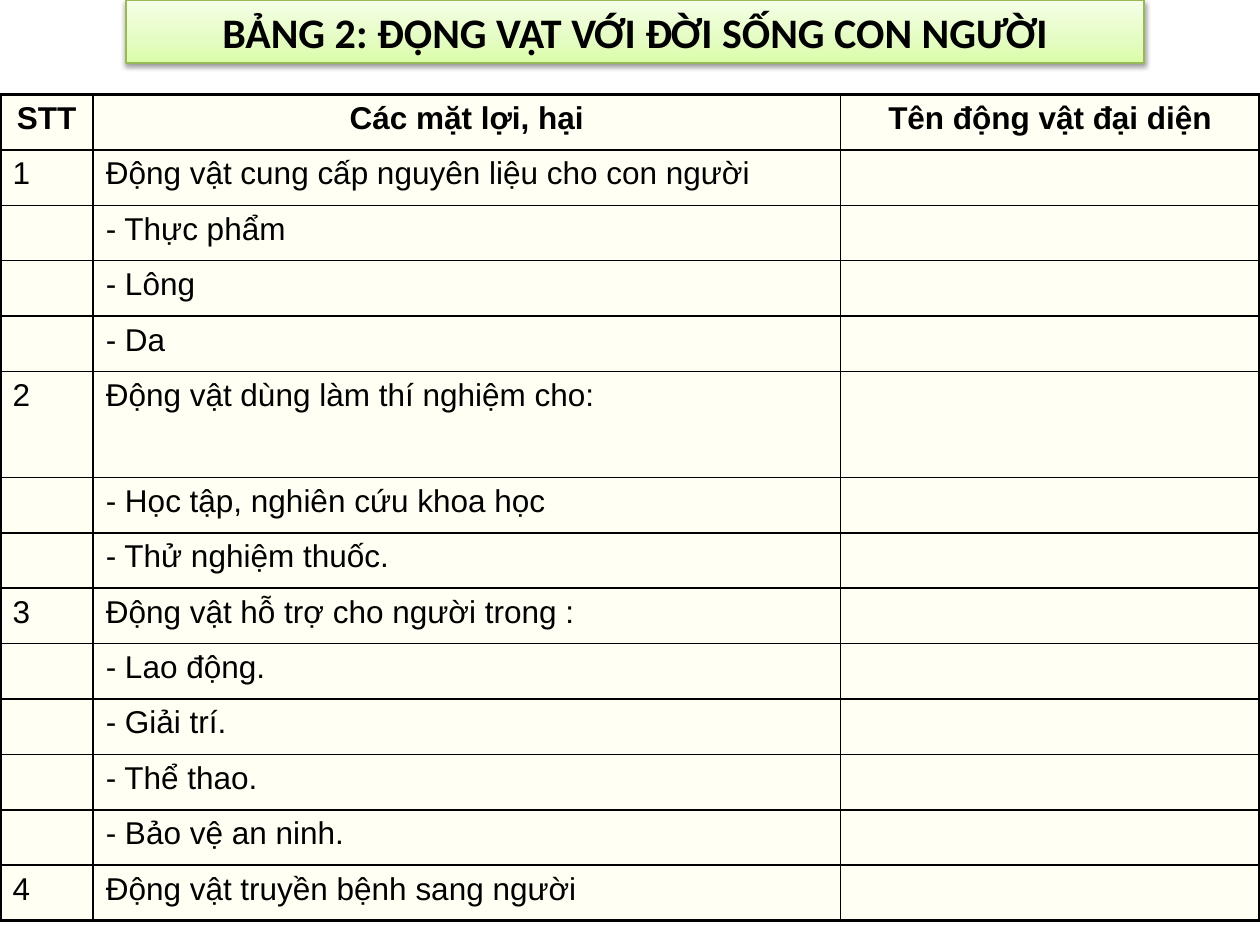
from lxml import etree
from pptx import Presentation
from pptx.dml.color import RGBColor
from pptx.enum.text import MSO_ANCHOR, MSO_AUTO_SIZE, PP_ALIGN
from pptx.oxml import parse_xml
from pptx.oxml.ns import nsdecls, qn
from pptx.util import Inches, Pt
from copy import deepcopy

CENTER, LEFT = PP_ALIGN.CENTER, PP_ALIGN.LEFT
MIDDLE, NO_FIT = MSO_ANCHOR.MIDDLE, MSO_AUTO_SIZE.NONE
BLACK, CREAM, GREEN = "000000", "FFFFF3", "98B955"
STOPS = [(0, "DAFDA7"), (0.35, "E4FCC2"), (1, "F5FFE7")]
THICK, THIN = 2.25, 1
WIDTHS = [0.74, 5.93, 3.33]
ROW, TALL = 0.44, 0.84
HEADS = ("STT", "Các mặt lợi, hại", "Tên động vật đại diện")
GROUPS = [
    ("Động vật cung cấp nguyên liệu cho con người",
     ["Thực phẩm", "Lông", "Da"]),
    ("Động vật dùng làm thí nghiệm cho:",
     ["Học tập, nghiên cứu khoa học", "Thử nghiệm thuốc."]),
    ("Động vật hỗ trợ cho người trong :",
     ["Lao động.", "Giải trí.", "Thể thao.", "Bảo vệ an ninh."]),
    ("Động vật truyền bệnh sang người", []),
]


def color(code):
    """Turn a hex string into a colour."""
    return RGBColor.from_string(code)


def style(para, name, size, bold, align):
    """Set the font and alignment of a paragraph."""
    font = para.font
    font.name, font.size, font.bold = name, Pt(size), bold
    font.color.rgb = color(BLACK)
    para.alignment = align


def shade(fill, stops):
    """Fill with a gradient that rises from the bottom edge."""
    fill.gradient()
    fill.gradient_angle = 90
    nodes = fill._fill._gradFill.find(qn("a:gsLst"))
    nodes.insert(1, deepcopy(nodes[0]))
    for stop, (place, code) in zip(fill.gradient_stops, stops):
        stop.position = place
        stop.color.rgb = color(code)


def cast(shape):
    """Give a shape a soft shadow straight below it."""
    shape._element.spPr.append(parse_xml(
        f'<a:effectLst {nsdecls("a")}>'
        '<a:outerShdw blurRad="39370" dist="20320" dir="5400000" rotWithShape="0">'
        f'<a:srgbClr val="{BLACK}"><a:alpha val="38000"/></a:srgbClr>'
        '</a:outerShdw></a:effectLst>'))


def add_title(slide, text):
    """Place the title in its green banner."""
    title = slide.shapes.title
    title.left, title.top = Inches(1), Inches(0)
    title.width, title.height = Inches(8.08), Inches(0.5)
    shade(title.fill, STOPS)
    title.line.color.rgb = color(GREEN)
    title.line.width = Pt(0.75)
    cast(title)
    frame = title.text_frame
    frame.text = text
    frame.auto_size, frame.vertical_anchor = NO_FIT, MIDDLE
    style(frame.paragraphs[0], "Calibri", 24, True, CENTER)


def edge(cell, side, width):
    """Draw one border of a cell."""
    line = etree.SubElement(cell._tc.get_or_add_tcPr(), qn(f"a:ln{side}"),
                            w=str(Pt(width)))
    fill = etree.SubElement(line, qn("a:solidFill"))
    etree.SubElement(fill, qn("a:srgbClr"), val=BLACK)


def list_rows():
    """Number the groups and list their items below them."""
    rows = [HEADS]
    for num, (head, items) in enumerate(GROUPS, 1):
        rows.append((str(num), head, ""))
        rows += [("", f"- {item}", "") for item in items]
    return rows


def add_grid(slide, rows):
    """Add the table with thick outer and thin inner borders."""
    highs = [TALL if row[0] == "2" else ROW for row in rows]
    table = slide.shapes.add_table(
        len(rows), len(WIDTHS), Inches(0), Inches(0.75),
        Inches(sum(WIDTHS)), Inches(sum(highs))).table
    table.first_row = table.horz_banding = False
    for col, width in zip(table.columns, WIDTHS):
        col.width = Inches(width)
    for row, high in zip(table.rows, highs):
        row.height = Inches(high)
    for r, row in enumerate(rows):
        for c, text in enumerate(row):
            cell = table.cell(r, c)
            outer = {"L": c == 0, "R": c == len(WIDTHS) - 1,
                     "T": r == 0, "B": r == len(rows) - 1}
            for side, thick in outer.items():
                edge(cell, side, THICK if thick else THIN)
            cell.fill.solid()
            cell.fill.fore_color.rgb = color(CREAM)
            cell.text = text
            para = cell.text_frame.paragraphs[0]
            para.space_before = Pt(3.6)
            style(para, "Arial", 18, r == 0, CENTER if r == 0 else LEFT)


def main():
    """Build and save the slide."""
    deck = Presentation()
    deck.slide_width, deck.slide_height = Inches(10), Inches(7.5)
    slide = deck.slides.add_slide(deck.slide_layouts[5])
    add_title(slide, "BẢNG 2: ĐỘNG VẬT VỚI ĐỜI SỐNG CON NGƯỜI")
    add_grid(slide, list_rows())
    deck.save("out.pptx")


if __name__ == "__main__":
    main()
